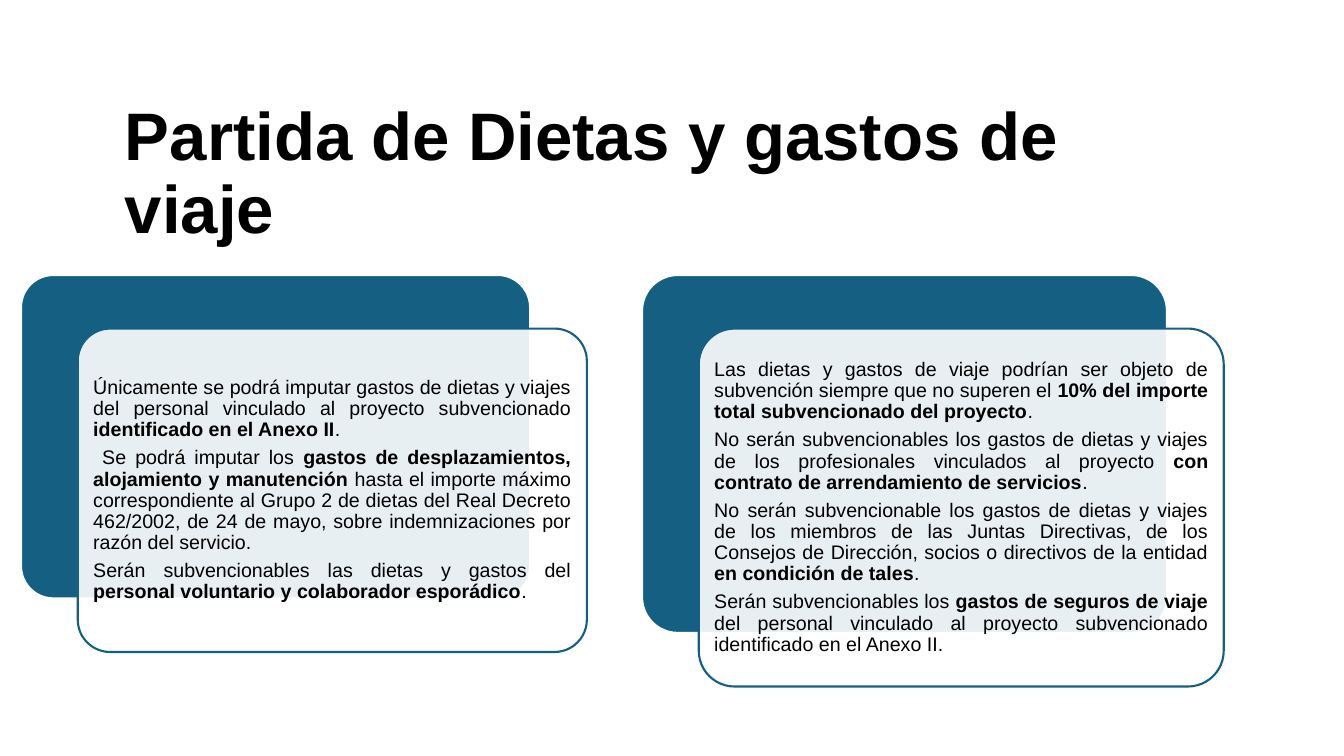
from lxml import etree
from pptx import Presentation
from pptx.dml.color import RGBColor
from pptx.enum.shapes import MSO_SHAPE as Shape
from pptx.enum.text import MSO_ANCHOR as Anchor, PP_ALIGN as Align
from pptx.oxml.ns import qn
from pptx.util import Cm, Pt

TEAL = RGBColor(0x15, 0x60, 0x82)
WHITE = RGBColor(0xFF, 0xFF, 0xFF)
BLACK = RGBColor(0x00, 0x00, 0x00)

CARD_SHIFT_X, CARD_SHIFT_Y = 1.43, 1.35
TEXT_MARGIN = 0.24
PANEL_TOP = 6.93

# Each paragraph: plain lead, bold middle, plain end
PANELS = [
    (0.53, 12.83, 8.15, [
        ("Únicamente se podrá imputar gastos de dietas y viajes del personal "
         "vinculado al proyecto subvencionado ",
         "identificado en el Anexo II", "."),
        (" Se podrá imputar los ",
         "gastos de desplazamientos, alojamiento y manutención ",
         "hasta el importe máximo correspondiente al Grupo 2 de dietas del Real "
         "Decreto 462/2002, de 24 de mayo, sobre indemnizaciones por razón del "
         "servicio. "),
        ("Serán subvencionables las dietas y gastos del ",
         "personal voluntario y colaborador esporádico", "."),
    ]),
    (16.18, 13.23, 9.02, [
        ("Las dietas y gastos de viaje podrían ser objeto de subvención siempre "
         "que no superen el ",
         "10% del importe total subvencionado del proyecto", "."),
        ("No serán subvencionables los gastos de dietas y viajes de los "
         "profesionales vinculados al proyecto ",
         "con contrato de arrendamiento de servicios", "."),
        ("No serán subvencionable los gastos de dietas y viajes de los miembros "
         "de las Juntas Directivas, de los Consejos de Dirección, socios o "
         "directivos de la entidad ",
         "en condición de tales", "."),
        ("Serán subvencionables los ",
         "gastos de seguros de viaje ",
         "del personal vinculado al proyecto subvencionado identificado en el "
         "Anexo II."),
    ]),
]


def add_rounded(left, top, width, height, fill, line):
    shape = slide.shapes.add_shape(
        Shape.ROUNDED_RECTANGLE, Cm(left), Cm(top), Cm(width), Cm(height))
    shape.adjustments[0] = 0.1
    shape.shadow.inherit = False
    shape.fill.solid()
    shape.fill.fore_color.rgb = fill
    shape.line.color.rgb = line
    shape.line.width = Pt(1.5)
    return shape


def add_text(left, top, width, height, paragraphs, size, bolds, frame_format,
             paragraph_format):
    """Add a wrapped text box; bolds gives the weight of each run in turn."""
    box = slide.shapes.add_textbox(Cm(left), Cm(top), Cm(width), Cm(height))
    frame = box.text_frame
    for name, value in frame_format.items():
        setattr(frame, name, value)
    for index, pieces in enumerate(paragraphs):
        paragraph = frame.add_paragraph() if index else frame.paragraphs[0]
        for name, value in paragraph_format.items():
            setattr(paragraph, name, value)
        for piece, bold in zip(pieces, bolds):
            run = paragraph.add_run()
            run.text = piece
            run.font.name = "Arial"
            run.font.size = Pt(size)
            run.font.bold = bold
            run.font.color.rgb = BLACK


presentation = Presentation()
presentation.slide_width = Cm(33.87)
presentation.slide_height = Cm(19.05)
slide = presentation.slides.add_slide(presentation.slide_layouts[6])

title_frame = {"word_wrap": True, "vertical_anchor": Anchor.MIDDLE,
               "margin_right": Cm(0.5)}
add_text(2.9, 2.26, 28.27, 4.32, [["Partida de Dietas y gastos de viaje"]],
         48, [True], title_frame, {"line_spacing": 0.9})

body_frame = {"word_wrap": True, "vertical_anchor": Anchor.MIDDLE}
for side in ("left", "top", "right", "bottom"):
    body_frame["margin_" + side] = Cm(0.15)
body_paragraph = {"alignment": Align.JUSTIFY, "line_spacing": 0.9,
                  "space_after": Pt(4.9)}

for left, width, height, paragraphs in PANELS:
    add_rounded(left, PANEL_TOP, width, height, TEAL, WHITE)
    card_left, card_top = left + CARD_SHIFT_X, PANEL_TOP + CARD_SHIFT_Y
    card = add_rounded(card_left, card_top, width, height, WHITE, TEAL)
    card_color = card.fill._xPr.find(qn("a:solidFill")).find(qn("a:srgbClr"))
    etree.SubElement(card_color, qn("a:alpha")).set("val", "90000")
    add_text(card_left + TEXT_MARGIN, card_top + TEXT_MARGIN,
             width - 2 * TEXT_MARGIN, height - 2 * TEXT_MARGIN,
             paragraphs, 14, [False, True, False], body_frame, body_paragraph)

presentation.save("out.pptx")
